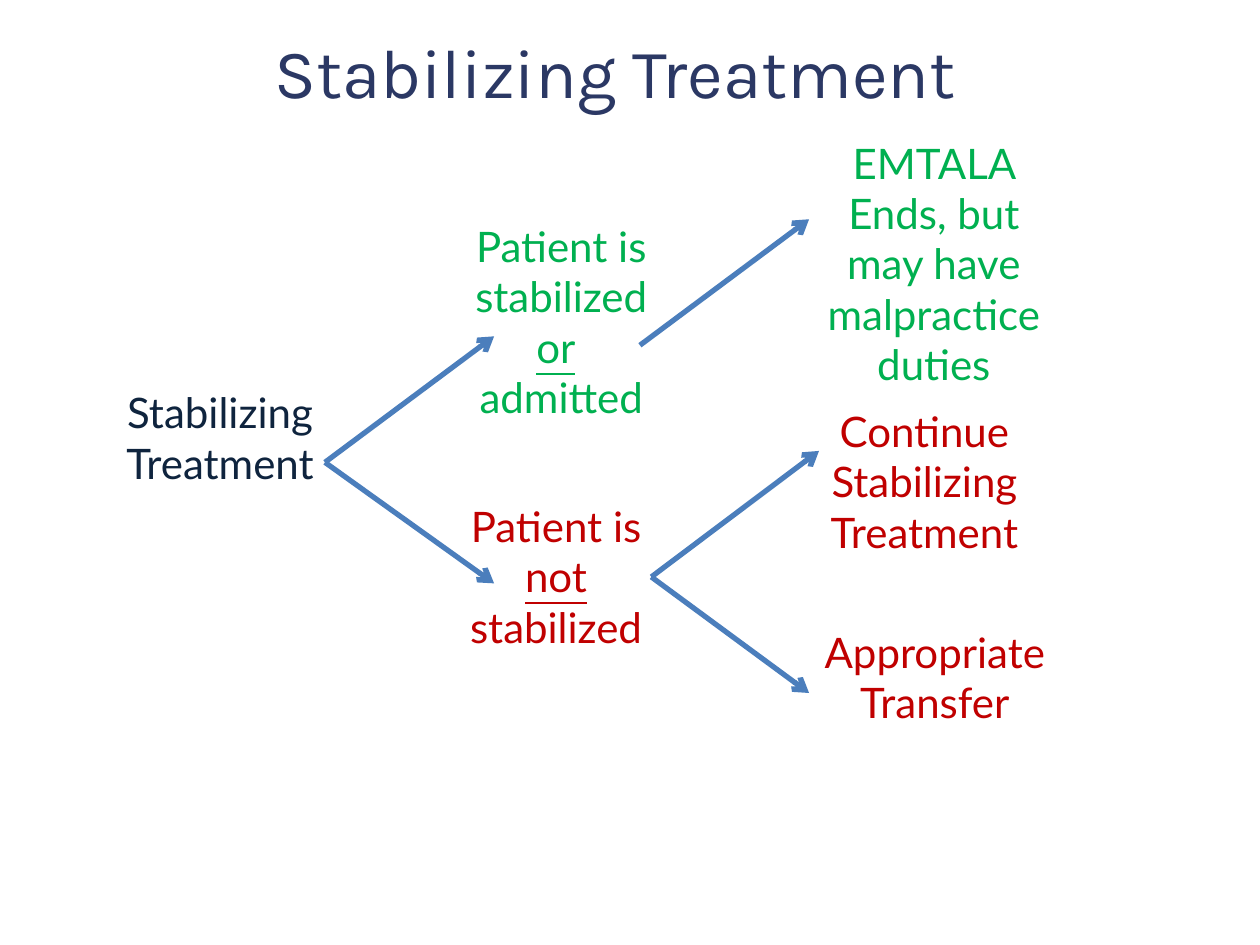
from lxml.etree import SubElement
from pptx import Presentation
from pptx.dml.color import RGBColor
from pptx.enum.shapes import MSO_CONNECTOR as Connector
from pptx.enum.text import MSO_ANCHOR as Anchor, PP_ALIGN as Align
from pptx.oxml.ns import qn
from pptx.util import Cm, Pt

NAVY, INK, GREEN, RED, BLUE = "2B3864", "0F243E", "00B050", "C00000", "4B7EBC"

STEPS = [
    ((2.11, 7.67, 4.65, 2.31), INK, ["Stabilizing Treatment"]),
    ((9.09, 4.32, 4.45, 4.37), GREEN,
     ["Patient is stabilized", "_or_ ", "admitted"]),
    ((9.09, 9.96, 4.24, 3.33), RED, ["Patient is _not_ stabilized"]),
    ((16.08, 2.64, 5.49, 4.37), GREEN,
     ["EMTALA Ends, but may have malpractice duties"]),
    ((15.88, 8.05, 5.51, 3.33), RED, ["Continue Stabilizing Treatment"]),
    ((15.67, 12.5, 6.35, 2.31), RED, ["Appropriate Transfer"]),
]

ARROWS = [
    ((6.55, 9.32), (9.96, 6.78)),
    ((6.55, 9.32), (9.96, 11.76)),
    ((12.9, 6.96), (16.31, 4.42)),
    ((13.13, 11.63), (16.31, 13.97)),
    ((13.13, 11.63), (16.51, 9.09)),
]


def rgb(color):
    """Turn a hex string into a colour."""
    return RGBColor.from_string(color)


def add_label(slide, box, color, lines, font="Lato", size=24,
              align=Align.CENTER, anchor=Anchor.TOP):
    """Add a wrapped text box; words between underscores are underlined."""
    frame = slide.shapes.add_textbox(*map(Cm, box)).text_frame
    frame.word_wrap = True
    frame.vertical_anchor = anchor
    for index, line in enumerate(lines):
        paragraph = frame.add_paragraph() if index else frame.paragraphs[0]
        paragraph.alignment = align
        paragraph.font.name = font
        paragraph.font.size = Pt(size)
        paragraph.font.color.rgb = rgb(color)
        for position, words in enumerate(line.split("_")):
            if words:
                run = paragraph.add_run()
                run.text = words
                if position % 2:
                    run.font.underline = True


def add_arrow(slide, start, end):
    """Draw a straight arrow from start to end."""
    arrow = slide.shapes.add_connector(
        Connector.STRAIGHT, *map(Cm, start + end))
    arrow.line.color.rgb = rgb(BLUE)
    arrow.line.width = Pt(3)
    SubElement(arrow.line._get_or_add_ln(), qn("a:tailEnd"), type="arrow")
    SubElement(arrow._element.spPr, qn("a:effectLst"))


def main():
    """Build the treatment decision tree."""
    deck = Presentation()
    deck.slide_width, deck.slide_height = Cm(25.4), Cm(19.05)
    slide = deck.slides.add_slide(deck.slide_layouts[6])
    add_label(slide, (5.28, 0.64, 19.05, 1.57), NAVY,
              ["Stabilizing Treatment"], font="Karla", size=39.6,
              align=Align.LEFT, anchor=Anchor.MIDDLE)
    for box, color, lines in STEPS:
        add_label(slide, box, color, lines)
    for start, end in ARROWS:
        add_arrow(slide, start, end)
    deck.save("out.pptx")


if __name__ == "__main__":
    main()
